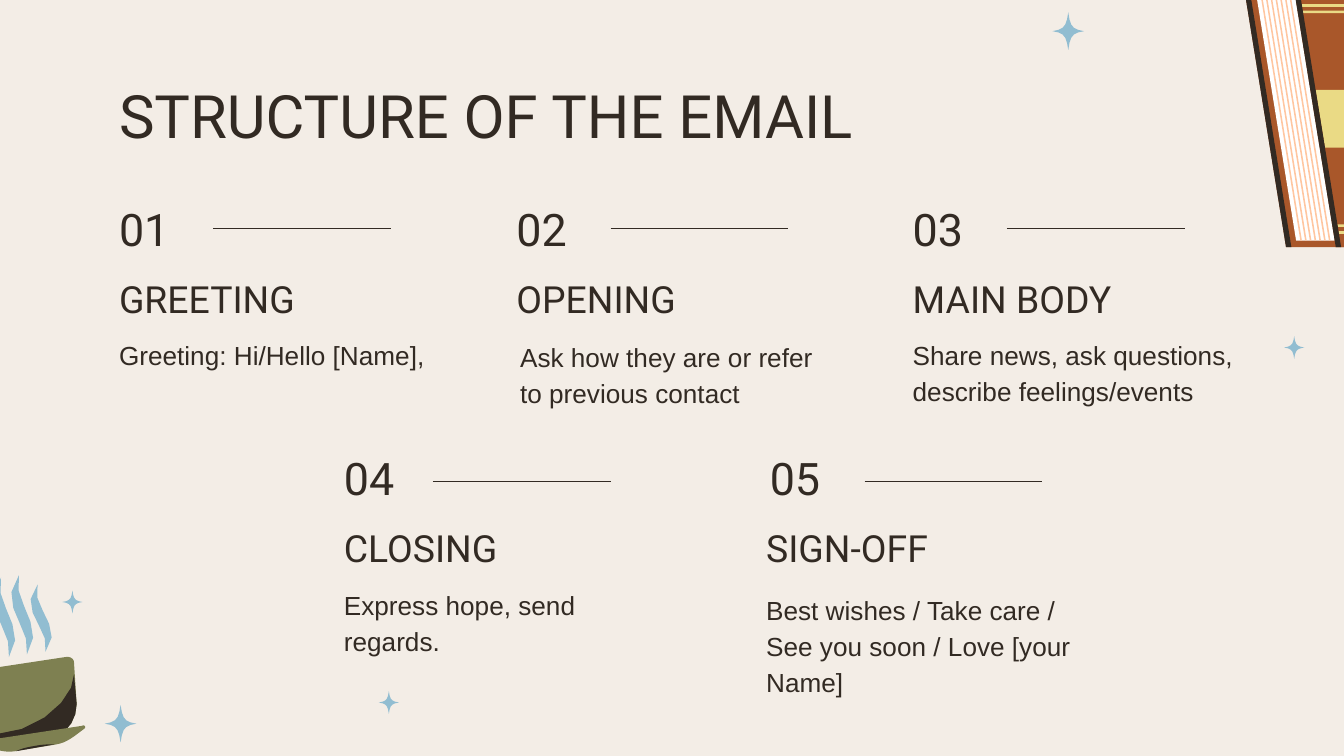
from dataclasses import dataclass

from lxml.etree import SubElement
from pptx import Presentation
from pptx.dml.color import RGBColor
from pptx.enum.shapes import MSO_CONNECTOR
from pptx.enum.text import MSO_ANCHOR
from pptx.oxml.ns import qn
from pptx.util import Cm, Pt

CREAM, DARK, BLUE, OLIVE = "F3EDE6", "322A23", "91BDD1", "7E8051"
RUST, YELLOW, WHITE, PEACH = "A9572A", "EADA85", "FFFFFF", "FFC6A0"
BOOK_SLANT = 0.162
BOOK_TOP, BOOK_HEIGHT = -0.18, 4.85
SPINE_LEFT = 24.46
CURVE_STEPS = 5

Point = tuple[float, float]


@dataclass
class Outline:
    color: str
    start: Point
    segments: list[tuple[float, ...]]


@dataclass
class Star:
    x: float
    y: float
    width: float
    height: float


@dataclass
class Slat:
    color: str
    left: float
    top: float
    width: float
    height: float


@dataclass
class Row:
    top: float
    rule_joined: bool


@dataclass
class Step:
    number: str
    heading: str
    advice: str
    row: Row
    left: float
    number_left: float
    rule_left: float
    advice_left: float
    advice_drop: float
    advice_width: float


UPPER, LOWER = Row(3.7, True), Row(8.41, False)
STEPS = [
    Step("01", "GREETING", "Greeting: Hi/Hello [Name],",
         UPPER, 2.0, 2.0, 4.03, 2.0, 2.37, 6.4),
    Step("02", "OPENING", "Ask how they are or refer to previous contact",
         UPPER, 9.51, 9.51, 11.54, 9.58, 2.41, 6.4),
    Step("03", "MAIN BODY", "Share news, ask questions, describe feelings/events",
         UPPER, 17.0, 17.0, 19.03, 17.0, 2.37, 6.76),
    Step("04", "CLOSING", "Express hope, send regards.",
         LOWER, 6.25, 6.25, 8.18, 6.25, 2.39, 6.4),
    Step("05", "SIGN-OFF", "Best wishes / Take care / See you soon / Love [your Name]",
         LOWER, 14.23, 14.3, 16.34, 14.23, 2.49, 6.92),
]

STARS = [
    Star(20.19, 0.59, 0.6, 0.71),
    Star(24.46, 6.57, 0.38, 0.43),
    Star(2.28, 13.68, 0.6, 0.71),
    Star(1.37, 11.38, 0.38, 0.43),
    Star(7.35, 13.28, 0.38, 0.43),
]


def tall_steam(dx: float, dy: float) -> Outline:
    curves = [(-0.08, 11.43, 0.61, 11.86, 0.51, 12.37),
              (0.89, 11.84, 0.2, 11.35, 0.36, 10.87)]
    shifted = [tuple(v + (dy if i % 2 else dx) for i, v in enumerate(c)) for c in curves]
    return Outline(BLUE, (0.36 + dx, 10.87 + dy), shifted)


CUP = [
    Outline(OLIVE, (0.41, 14.05), [
        (0.91, 13.97), (1.22, 13.92, 1.45, 13.64, 1.45, 13.31),
        (1.4, 12.52), (1.4, 12.45, 1.32, 12.4, 1.24, 12.42),
        (-0.41, 12.67), (-0.48, 12.7, -0.53, 12.78, -0.51, 12.85),
        (-0.3, 13.59), (-0.23, 13.92, 0.08, 14.1, 0.41, 14.05)]),
    Outline(DARK, (1.4, 12.75), [
        (1.45, 13.31), (1.45, 13.64, 1.22, 13.92, 0.91, 13.97),
        (0.41, 14.05), (0.2, 14.1, 0, 14.02, -0.13, 13.89),
        (0.86, 13.82, 1.42, 13.11, 1.4, 12.75)]),
    Outline(OLIVE, (0.28, 14.2), [
        (1.07, 14.07), (1.19, 14.05, 1.3, 13.99, 1.4, 13.92),
        (1.6, 13.77), (1.63, 13.74, 1.6, 13.69, 1.55, 13.72),
        (-0.3, 14), (-0.33, 14.02, -0.36, 14.07, -0.3, 14.1),
        (-0.08, 14.17), (0.05, 14.2, 0.15, 14.22, 0.28, 14.2)]),
    Outline(DARK, (0.66, 14.1), [
        (0.81, 14.07, 0.94, 14.07, 1.04, 14.07),
        (0.3, 14.2), (0.41, 14.15, 0.53, 14.12, 0.66, 14.1)]),
    Outline(BLUE, (0.71, 11.05), [
        (0.3, 11.53, 0.97, 11.89, 0.86, 12.32),
        (1.24, 11.86, 0.56, 11.46, 0.71, 11.05)]),
    tall_steam(0, 0),
    tall_steam(-0.34, 0.05),
]

BANDS = [(1.7, 1.09), (0.08, 0.05), (0.2, 0.05), (4.24, 0.05), (4.37, 0.05)]
BOOK = [
    Slat(RUST, 23.52, BOOK_TOP, 2.44, BOOK_HEIGHT),
    Slat(WHITE, 23.75, -0.05, 0.74, 4.6),
    Slat(RUST, SPINE_LEFT, BOOK_TOP, 2.5, BOOK_HEIGHT),
    *[Slat(YELLOW, SPINE_LEFT + 0.1 + BOOK_SLANT * (top - BOOK_TOP), top, 2.5, height)
      for top, height in BANDS],
    *[Slat(DARK, left, BOOK_TOP, 0.1, BOOK_HEIGHT) for left in (SPINE_LEFT, 23.52)],
    *[Slat(PEACH, 23.83 + 0.09 * i, -0.05, 0.03, 4.6) for i in range(7)],
]


def rgb(color: str) -> RGBColor:
    return RGBColor.from_string(color)


def curve_points(start: Point, segment: tuple[float, ...]) -> list[Point]:
    if len(segment) == 2:
        return [segment]
    x1, y1, x2, y2, x3, y3 = segment
    points = []
    for i in range(1, CURVE_STEPS + 1):
        t = i / CURVE_STEPS
        a, b, c, d = (1 - t) ** 3, 3 * t * (1 - t) ** 2, 3 * t * t * (1 - t), t ** 3
        points.append((a * start[0] + b * x1 + c * x2 + d * x3,
                       a * start[1] + b * y1 + c * y2 + d * y3))
    return points


def draw_outline(slide, outline: Outline) -> None:
    points = [outline.start]
    for segment in outline.segments:
        points += curve_points(points[-1], segment)
    corners = [(Cm(x), Cm(y)) for x, y in points]
    builder = slide.shapes.build_freeform(*corners[0])
    builder.add_line_segments(corners[1:], close=True)
    shape = builder.convert_to_shape()
    shape.shadow.inherit = False
    shape.fill.solid()
    shape.fill.fore_color.rgb = rgb(outline.color)
    shape.line.fill.background()


def draw_star(slide, star: Star) -> None:
    w, h = star.width / 2, star.height / 2
    near_side, near_tip = (0.25, 0.1), (0.12, 0.25)
    arms = []
    for sx, sy, to_tip in ((1, 1, True), (-1, 1, False), (-1, -1, True), (1, -1, False)):
        order = (near_side, near_tip, (0, 1)) if to_tip else (near_tip, near_side, (1, 0))
        arms.append(tuple(v for px, py in order
                          for v in (star.x + sx * w * px, star.y + sy * h * py)))
    draw_outline(slide, Outline(BLUE, (star.x + w, star.y), arms))


def draw_slat(slide, slat: Slat) -> None:
    right, bottom = slat.left + slat.width, slat.top + slat.height
    lean = BOOK_SLANT * slat.height
    draw_outline(slide, Outline(slat.color, (slat.left, slat.top), [
        (right, slat.top), (right + lean, bottom), (slat.left + lean, bottom)]))


def draw_text(slide, text: str, left: float, top: float, width: float, height: float,
              size: int, font: str = "Roboto", anchor=MSO_ANCHOR.TOP, spacing: float = 1.0):
    box = slide.shapes.add_textbox(Cm(left), Cm(top), Cm(width), Cm(height))
    frame = box.text_frame
    frame.word_wrap = True
    frame.vertical_anchor = anchor
    frame.margin_left = frame.margin_right = frame.margin_top = frame.margin_bottom = Cm(0.25)
    frame.text = text
    paragraph = frame.paragraphs[0]
    paragraph.line_spacing = spacing
    run_font = paragraph.runs[0].font
    run_font.name, run_font.size, run_font.color.rgb = font, Pt(size), rgb(DARK)
    return box


def draw_step(slide, step: Step) -> None:
    top = step.row.top
    number = draw_text(slide, step.number, step.number_left, top, 2.03, 1.24, 24,
                       anchor=MSO_ANCHOR.MIDDLE)
    draw_text(slide, step.heading, step.left, top + 1.25, 6.4, 1.37, 20,
              anchor=MSO_ANCHOR.BOTTOM, spacing=1.15)
    draw_text(slide, step.advice, step.advice_left, top + step.advice_drop,
              step.advice_width, 1.8, 14, font="Arial", spacing=1.15)
    rule_y = number.top + number.height // 2 if step.row.rule_joined else Cm(top + 0.69)
    rule = slide.shapes.add_connector(MSO_CONNECTOR.STRAIGHT, Cm(step.rule_left), rule_y,
                                      Cm(step.rule_left + 3.36), rule_y)
    if step.row.rule_joined:
        rule.begin_connect(number, 3)
    rule.line.color.rgb = rgb(DARK)
    rule.line.width = Pt(0.75)
    SubElement(rule._element.spPr, qn("a:effectLst"))


def main() -> None:
    deck = Presentation()
    deck.slide_width, deck.slide_height = Cm(25.4), Cm(14.29)
    slide = deck.slides.add_slide(deck.slide_layouts[6])
    slide.background.fill.solid()
    slide.background.fill.fore_color.rgb = rgb(CREAM)
    for star in STARS:
        draw_star(slide, star)
    for part in CUP:
        draw_outline(slide, part)
    for slat in BOOK:
        draw_slat(slide, slat)
    draw_text(slide, "STRUCTURE OF THE EMAIL", 2.0, 1.24, 21.41, 1.8, 32)
    for step in STEPS:
        draw_step(slide, step)
    deck.save("out.pptx")


if __name__ == "__main__":
    main()
